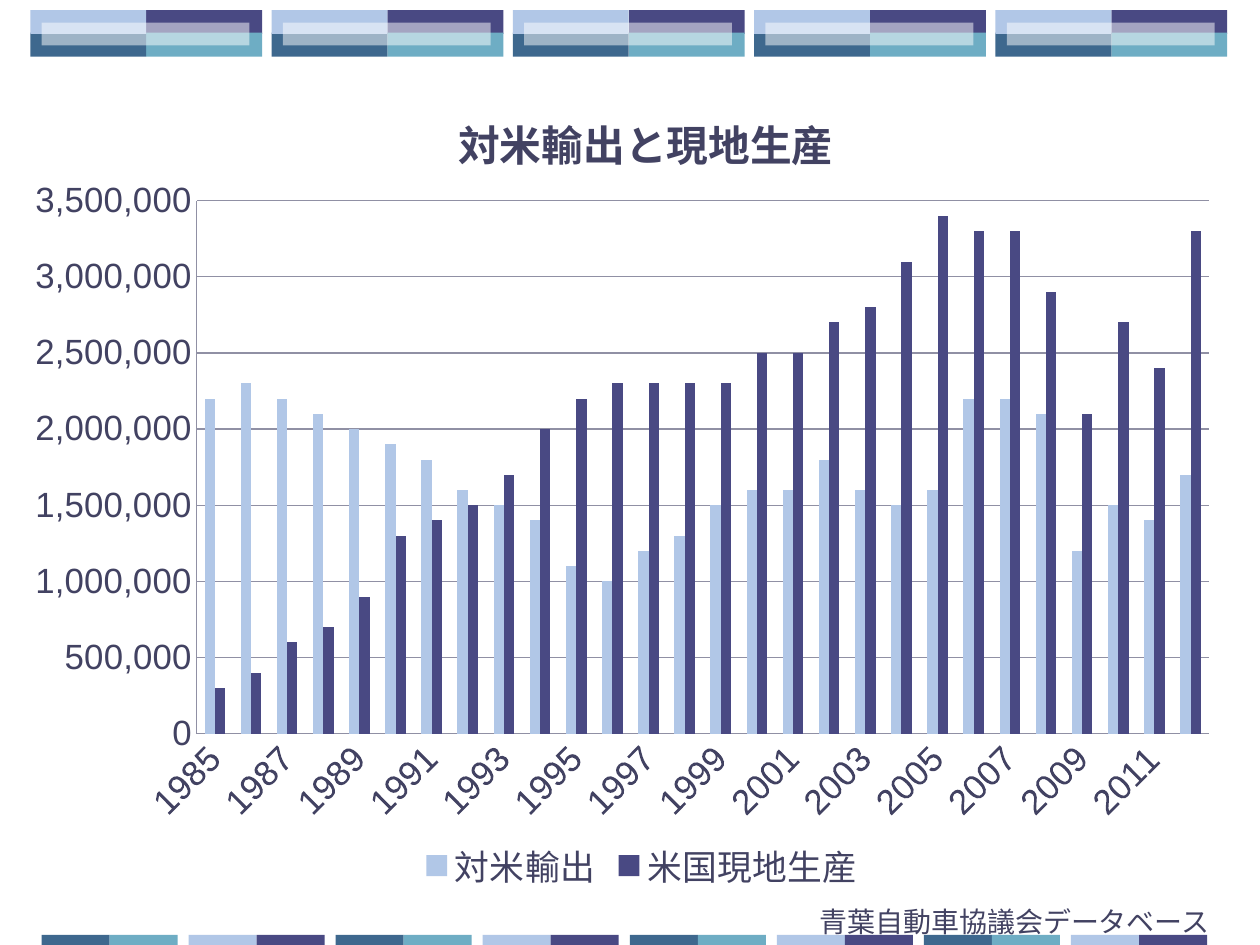
from lxml.etree import SubElement
from pptx import Presentation
from pptx.chart.data import CategoryChartData
from pptx.dml.color import RGBColor
from pptx.enum.chart import XL_CHART_TYPE, XL_LEGEND_POSITION, XL_TICK_MARK
from pptx.enum.shapes import MSO_SHAPE
from pptx.enum.text import MSO_ANCHOR
from pptx.oxml import parse_xml
from pptx.oxml.ns import nsdecls, qn
from pptx.util import Inches, Pt

PALE = RGBColor(0xB1, 0xC7, 0xE7)
NAVY = RGBColor(0x49, 0x49, 0x83)
TEAL = RGBColor(0x6E, 0xAD, 0xC4)
STEEL = RGBColor(0x3E, 0x68, 0x8E)
WHITE = RGBColor(0xFF, 0xFF, 0xFF)
INK = RGBColor(0x42, 0x42, 0x62)
GRID = RGBColor(0x90, 0x90, 0xA4)

TITLE = "対米輸出と現地生産"
SOURCE = "青葉自動車協議会データベース"
YEARS = [str(year) for year in range(1985, 2013)]
UNIT = 100000
SERIES = [
    ("対米輸出", PALE,
     [22, 23, 22, 21, 20, 19, 18, 16, 15, 14, 11, 10, 12, 13,
      15, 16, 16, 18, 16, 15, 16, 22, 22, 21, 12, 15, 14, 17]),
    ("米国現地生産", NAVY,
     [3, 4, 6, 7, 9, 13, 14, 15, 17, 20, 22, 23, 23, 23,
      23, 25, 25, 27, 28, 31, 34, 33, 33, 29, 21, 27, 24, 33]),
]
TILES = [(1, 0, NAVY), (1, 1, TEAL), (0, 1, STEEL), (0, 0, PALE)]
PAIRS = [(STEEL, TEAL), (PALE, NAVY)]
TEXT = {"name": "Arial", "size": Pt(20), "bold": False}
HEAD = {**TEXT, "size": Pt(24), "bold": True}
NOTE = {**TEXT, "size": Pt(16)}
VALUE = {"minimum_scale": 0, "maximum_scale": 35 * UNIT,
         "major_unit": 5 * UNIT, "has_major_gridlines": True}
FRAME = {"word_wrap": False, "vertical_anchor": MSO_ANCHOR.MIDDLE,
         "margin_top": Inches(0.05), "margin_bottom": Inches(0.05)}


def apply(item, look):
    for key, value in look.items():
        setattr(item, key, value)


def style(font, look):
    apply(font, look)
    font.color.rgb = INK


def block(slide, left, top, wide, high, color):
    box = slide.shapes.add_shape(
        MSO_SHAPE.RECTANGLE, *map(Inches, (left, top, wide, high)))
    box.shadow.inherit = False
    box.fill.solid()
    box.fill.fore_color.rgb = color
    box.line.fill.background()
    return box


def place(owner, index, parts):
    for old in owner.findall(qn("c:layout")):
        owner.remove(old)
    layout = parse_xml(f"<c:layout {nsdecls('c')}><c:manualLayout/></c:layout>")
    for tag, value in parts.items():
        SubElement(layout[0], qn(f"c:{tag}")).set("val", str(value))
    owner.insert(index, layout)


def bands(slide):
    for n in range(5):
        left = 0.24 + n * 7.66 / 4
        for col, row, color in TILES:
            block(slide, left + col * 0.92, 0.08 + row * 0.18, 0.92, 0.19, color)
        glass = block(slide, left + 0.09, 0.18, 1.65, 0.18, WHITE)
        tint = glass.element.spPr.find(qn("a:solidFill"))[0]
        SubElement(tint, qn("a:alpha")).set("val", "50000")
    for n in range(8):
        for col, color in enumerate(PAIRS[n % 2]):
            block(slide, 0.33 + n * 8.17 / 7 + col * 0.54, 7.42, 0.54, 0.08, color)


def graph(slide):
    data = CategoryChartData(number_format="#,##0")
    data.categories = YEARS
    for name, color, counts in SERIES:
        data.add_series(name, [count * UNIT for count in counts])
    chart = slide.shapes.add_chart(
        XL_CHART_TYPE.COLUMN_CLUSTERED,
        *map(Inches, (0.28, 0.6, 9.57, 6.53)), data).chart
    style(chart.font, TEXT)

    plot = chart.plots[0]
    apply(plot, {"gap_width": 150, "overlap": 0, "vary_by_categories": False})
    for bars, (name, color, counts) in zip(plot.series, SERIES):
        bars.format.fill.solid()
        bars.format.fill.fore_color.rgb = color

    years, scale = chart.category_axis, chart.value_axis
    apply(scale, VALUE)
    scale.tick_labels.number_format = "#,##0"
    scale.tick_labels.number_format_is_linked = False
    for axis in (years, scale):
        axis.major_tick_mark = axis.minor_tick_mark = XL_TICK_MARK.NONE
        style(axis.tick_labels.font, TEXT)
    for part in (years, scale, scale.major_gridlines):
        part.format.line.color.rgb = GRID
        part.format.line.width = Pt(0.75)
    root = years._element
    root.find(qn("c:txPr")).find(qn("a:bodyPr")).set("rot", "-2700000")
    skip = parse_xml(f'<c:tickLblSkip {nsdecls("c")} val="2"/>')
    root.find(qn("c:noMultiLvlLbl")).addprevious(skip)

    chart.has_legend = True
    apply(chart.legend, {"position": XL_LEGEND_POSITION.BOTTOM,
                         "include_in_layout": False})
    style(chart.legend.font, TEXT)

    frame = chart.chart_title.text_frame
    frame.text = TITLE
    style(frame.paragraphs[0].runs[0].font, HEAD)
    place(chart.chart_title._element, 1,
          {"xMode": "edge", "yMode": "edge", "x": 0.34, "y": 0.03})
    place(plot._element.getparent(), 0,
          {"layoutTarget": "inner", "xMode": "edge", "yMode": "edge",
           "x": 0.128, "y": 0.152, "w": 0.845, "h": 0.648})


def main():
    deck = Presentation()
    deck.slide_width, deck.slide_height = Inches(10), Inches(7.5)
    slide = deck.slides.add_slide(deck.slide_layouts[6])
    bands(slide)
    note = slide.shapes.add_textbox(*map(Inches, (6.41, 7.13, 3.44, 0.37)))
    apply(note.text_frame, FRAME)
    note.text_frame.text = SOURCE
    style(note.text_frame.paragraphs[0].runs[0].font, NOTE)
    graph(slide)
    deck.save("out.pptx")


if __name__ == "__main__":
    main()
